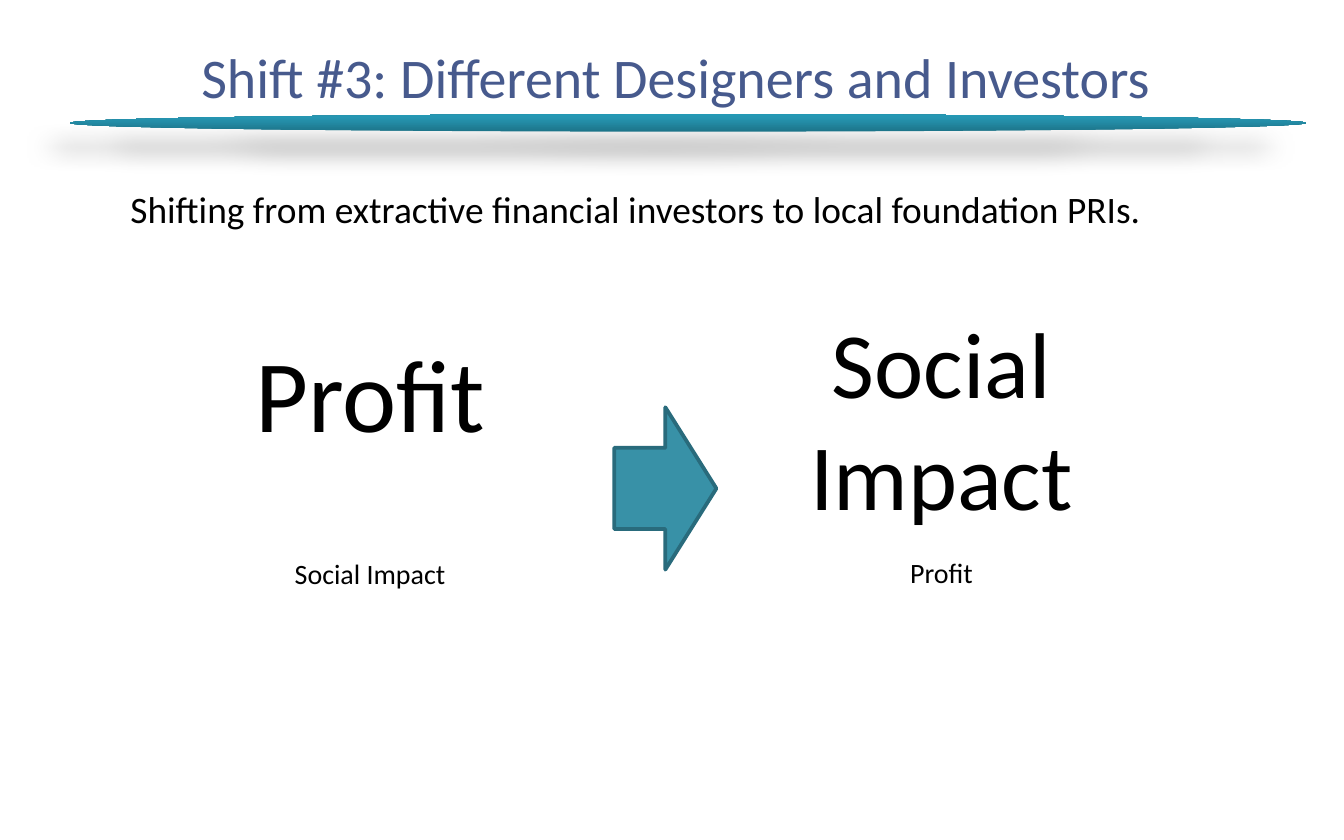
from copy import deepcopy

from lxml import etree
from pptx import Presentation
from pptx.dml.color import RGBColor
from pptx.enum.shapes import MSO_SHAPE
from pptx.enum.text import MSO_ANCHOR, MSO_AUTO_SIZE, PP_ALIGN
from pptx.oxml.ns import qn
from pptx.util import Cm, Pt

LEFT, CENTER = PP_ALIGN.LEFT, PP_ALIGN.CENTER
TOP, MIDDLE = MSO_ANCHOR.TOP, MSO_ANCHOR.MIDDLE
NO_AUTOFIT = MSO_AUTO_SIZE.NONE
ELLIPSE, RIGHT_ARROW = MSO_SHAPE.OVAL, MSO_SHAPE.RIGHT_ARROW

FONT = "Calibri"
COLORS = {
    "title": "475A8D",
    "text": "000000",
    "arrow": "3891A7",
    "arrow_edge": "296B7C",
    "shadow": "000000",
}
RULE_GRADIENT = [(0, "1D7489"), (0.8, "2696B2"), (1, "2499B5")]

TITLE = "Shift #3: Different Designers and Investors"
STATEMENT = "Shifting from extractive financial investors to local foundation PRIs."
# Each side: box in cm, then (text, size, space before) from dominant to minor
PRIORITIES = [
    ((4.06, 6.12, 5.87, 5.18), [("Profit", 55, 0), ("Social Impact", 15, 55)]),
    ((14.05, 5.64, 7.49, 5.66), [("Social Impact", 50, 0), ("Profit", 15, 14.3)]),
]


def place(shape, box):
    shape.left, shape.top, shape.width, shape.height = (Cm(n) for n in box)


def write(shape, lines, color="text", align=CENTER, anchor=TOP):
    """Fill the shape with (text, size, space before) lines."""
    frame = shape.text_frame
    frame.word_wrap = True
    frame.auto_size = NO_AUTOFIT
    frame.vertical_anchor = anchor
    for index, (text, size, space) in enumerate(lines):
        paragraph = frame.add_paragraph() if index else frame.paragraphs[0]
        properties = paragraph._p.get_or_add_pPr()
        properties.set("marL", "0")
        properties.set("indent", "0")
        etree.SubElement(properties, qn("a:buNone"))
        paragraph.alignment = align
        paragraph.space_before = Pt(space)
        run = paragraph.add_run()
        run.text = text
        run.font.name = FONT
        run.font.size = Pt(size)
        run.font.color.rgb = RGBColor.from_string(COLORS[color])


def add_shape(slide, kind, box):
    shape = slide.shapes.add_shape(kind, *(Cm(n) for n in box))
    shape.shadow.inherit = False
    return shape


def fill_gradient(shape, colors, angle):
    shape.fill.gradient()
    shape.fill.gradient_angle = angle
    stop_list = shape._element.spPr.find(".//" + qn("a:gsLst"))
    while len(stop_list) < len(colors):
        stop_list.append(deepcopy(stop_list[0]))
    for stop, (position, color) in zip(shape.fill.gradient_stops, colors):
        stop.position = position
        stop.color.rgb = RGBColor.from_string(color)


def cast_shadow(shape, color, opacity, blur, distance, direction):
    effects = shape._element.spPr.find(qn("a:effectLst"))
    shadow = etree.SubElement(
        effects, qn("a:outerShdw"), blurRad=str(Pt(blur)), dist=str(Pt(distance)),
        dir=str(direction * 60000), algn="ctr", rotWithShape="0")
    tint = etree.SubElement(shadow, qn("a:srgbClr"), val=color)
    etree.SubElement(tint, qn("a:alpha"), val=str(opacity * 1000))


def main():
    deck = Presentation()
    deck.slide_width, deck.slide_height = Cm(25.4), Cm(15.88)
    slide = deck.slides.add_slide(deck.slide_layouts[1])

    title, statement = slide.placeholders
    place(title, (3.25, 0.61, 19.05, 1.65))
    write(title, [(TITLE, 30, 0)], color="title", anchor=MIDDLE)
    place(statement, (2.21, 3.4, 21.16, 2.46))
    write(statement, [(STATEMENT, 20, 0)], align=LEFT)

    for box, lines in PRIORITIES:
        write(slide.shapes.add_textbox(*(Cm(n) for n in box)), lines)

    arrow = add_shape(slide, RIGHT_ARROW, (11.61, 7.7, 1.93, 3.07))
    arrow.fill.solid()
    arrow.fill.fore_color.rgb = RGBColor.from_string(COLORS["arrow"])
    arrow.line.color.rgb = RGBColor.from_string(COLORS["arrow_edge"])
    arrow.line.width = Pt(2)

    title_rule = add_shape(slide, ELLIPSE, (1.32, 2.16, 23.37, 0.33))
    fill_gradient(title_rule, RULE_GRADIENT, angle=90)
    title_rule.line.fill.background()
    cast_shadow(title_rule, COLORS["shadow"], opacity=28, blur=11.8,
                distance=19.7, direction=141)

    deck.save("out.pptx")


if __name__ == "__main__":
    main()
